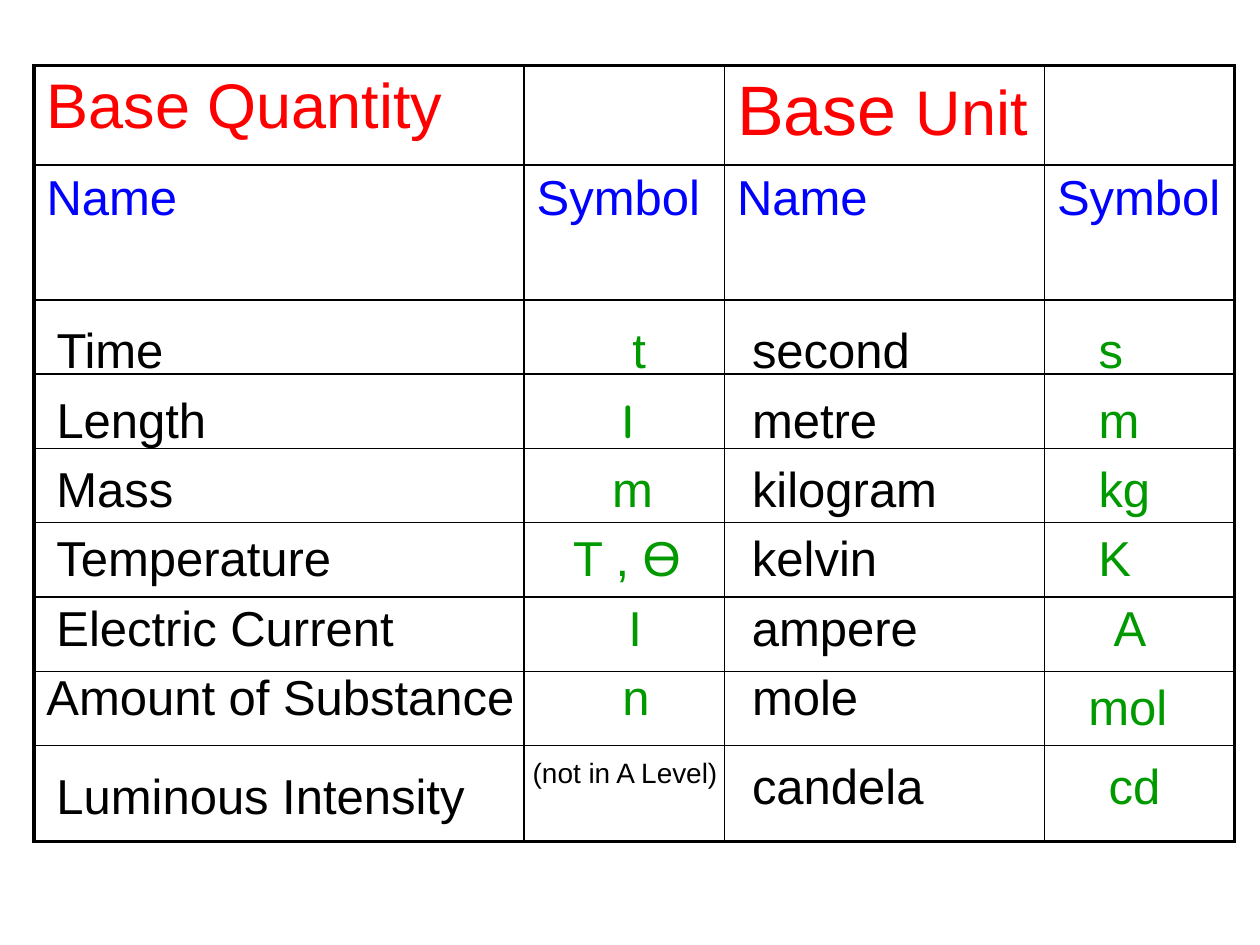
import pptx
import pptx.util
import pptx.dml.color
import pptx.enum.text
import pptx.oxml.ns
import lxml.etree

Inches, Pt = pptx.util.Inches, pptx.util.Pt
RGBColor = pptx.dml.color.RGBColor
BLACK = RGBColor(0, 0, 0)
RED = RGBColor(255, 0, 0)
BLUE = RGBColor(0, 0, 255)
GREEN = RGBColor(0, 153, 0)

COL_WIDTHS = [3.89, 1.59, 2.54, 1.51]
ROW_HEIGHTS = [0.79, 1.07] + [0.59] * 6 + [0.76]
TABLE_LEFT, TABLE_TOP = 0.27, 0.52
FIRST_TOP, STEP, BOX_HEIGHT = 2.49, 0.55, 0.57


def style(p, size, color, font="Arial"):
    p.font.size = Pt(size)
    p.font.name = font
    p.font.color.rgb = color


def set_borders(cell, widths):
    tcPr = cell._tc.get_or_add_tcPr()
    for i, (side, width) in enumerate(widths.items()):
        ln = lxml.etree.Element(pptx.oxml.ns.qn("a:ln" + side), w=str(Pt(width)))
        fill = lxml.etree.SubElement(ln, pptx.oxml.ns.qn("a:solidFill"))
        lxml.etree.SubElement(fill, pptx.oxml.ns.qn("a:srgbClr"), val=str(BLACK))
        tcPr.insert(i, ln)


prs = pptx.Presentation()
prs.slide_width, prs.slide_height = Inches(10), Inches(7.5)
s = prs.slides.add_slide(prs.slide_layouts[6])

rows, cols = len(ROW_HEIGHTS), len(COL_WIDTHS)
table = s.shapes.add_table(rows, cols, Inches(TABLE_LEFT), Inches(TABLE_TOP),
                           Inches(sum(COL_WIDTHS)), Inches(sum(ROW_HEIGHTS))).table
table.first_row = table.horz_banding = False
for col, width in zip(table.columns, COL_WIDTHS):
    col.width = Inches(width)
for row, height in zip(table.rows, ROW_HEIGHTS):
    row.height = Inches(height)
for r in range(rows):
    for c in range(cols):
        cell = table.cell(r, c)
        cell.fill.background()
        set_borders(cell, {"L": 2.25 if c == 0 else 1,
                           "R": 2.25 if c == cols - 1 else 1,
                           "T": 2.25 if r == 0 else 1,
                           "B": 2.25 if r == rows - 1 else 1})

headings = [(0, 0, [("Base Quantity", 36)], RED),
            (0, 2, [("Base ", 40), ("Unit", 36)], RED)]
headings += [(1, c, [(text, 28)], BLUE)
             for c, text in enumerate(["Name", "Symbol"] * 2)]
for row, col, runs, color in headings:
    p = table.cell(row, col).text_frame.paragraphs[0]
    style(p, runs[0][1], color)
    for text, size in runs:
        r = p.add_run()
        r.text = text
        r.font.size = Pt(size)

entries = [
    (BLACK, [("Time", 0.35, 1.89), ("Length", 0.35, 2.68), ("Mass", 0.35, 2.13),
             ("Temperature", 0.35, 2.6), ("Electric Current", 0.35, 3.23),
             ("Amount of Substance", 0.27, 4.49), ("Luminous Intensity", 0.35, 4.17)]),
    (GREEN, [("t", 4.92, 0.55), ("l", 4.84, 0.63), ("m", 4.76, 0.87),
             ("T , Ө", 4.45, 1.5), ("I", 4.53, 1.02), ("n", 4.84, 0.71),
             ("(not in A Level)", 4.13, 2.2)]),
    (BLACK, [("second", 5.87, 1.81), ("metre", 5.87, 1.89), ("kilogram", 5.87, 2.05),
             ("kelvin", 5.87, 1.73), ("ampere", 5.87, 1.73), ("mole", 5.87, 1.28),
             ("candela", 5.87, 2.05)]),
    (GREEN, [("s", 8.62, 0.71), ("m", 8.62, 0.79), ("kg", 8.62, 0.79), ("K", 8.62, 0.87),
             ("A", 8.74, 1.26), ("mol", 8.54, 1.46), ("cd", 8.7, 0.87)]),
]
lowered = {"mol": 0.08, "Luminous Intensity": 0.24, "(not in A Level)": 0.16,
           "candela": 0.16, "cd": 0.16}

for color, items in entries:
    for i, (text, left, width) in enumerate(items):
        top = FIRST_TOP + i * STEP + lowered.get(text, 0)
        is_note = text.startswith("(")
        sp = s.shapes.add_textbox(Inches(left), Inches(top), Inches(width),
                                  Inches(0.37 if is_note else BOX_HEIGHT))
        tf = sp.text_frame
        tf.word_wrap = True
        p = tf.paragraphs[0]
        p.text = text
        style(p, 16 if is_note else 28, BLACK if is_note else color)
        if text == "l":
            style(p, 28, color, "Comic Neue")
            p.font.bold = True
        if text == "I":
            p.alignment = pptx.enum.text.PP_ALIGN.CENTER
        if is_note:
            p.alignment = pptx.enum.text.PP_ALIGN.LEFT

prs.save("out.pptx")
